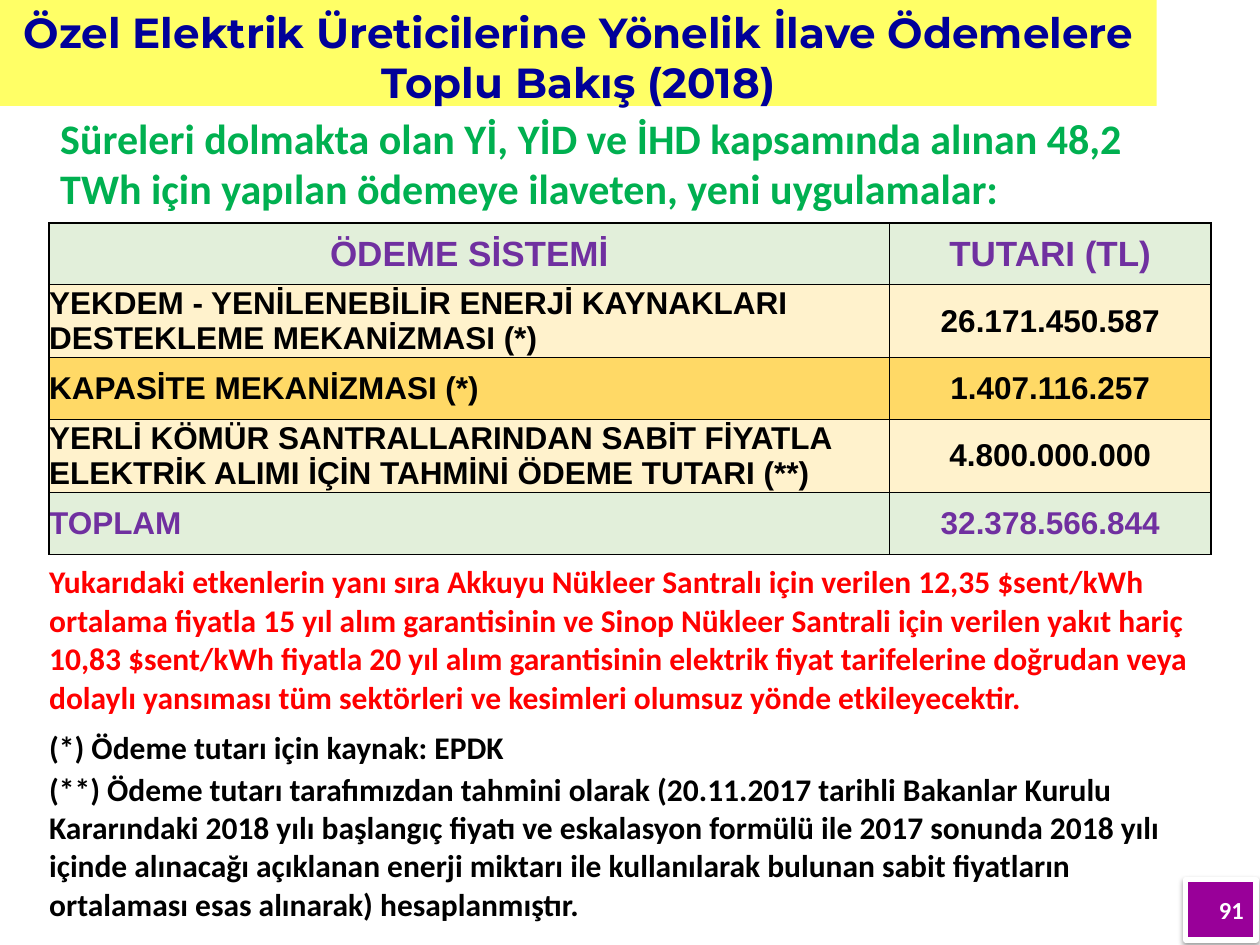
from typing import NamedTuple

from lxml.etree import SubElement
from pptx import Presentation
from pptx.dml.color import RGBColor
from pptx.enum.shapes import MSO_SHAPE
from pptx.enum.text import MSO_ANCHOR, PP_ALIGN
from pptx.oxml.ns import qn
from pptx.util import Inches, Pt

WHITE = RGBColor(0xFF, 0xFF, 0xFF)
BLACK = RGBColor(0, 0, 0)
RED = RGBColor(0xFF, 0, 0)
GREEN = RGBColor(0, 0xB0, 0x50)
NAVY = RGBColor(0, 0, 0x99)
VIOLET = RGBColor(0x70, 0x30, 0xA0)
PLUM = RGBColor(0x99, 0, 0x99)
LEMON = RGBColor(0xFF, 0xFF, 0x66)
MINT = RGBColor(0xE2, 0xEF, 0xDA)
CREAM = RGBColor(0xFF, 0xF2, 0xCC)
GOLD = RGBColor(0xFF, 0xD9, 0x66)


class Style(NamedTuple):
    font: str
    size: int
    color: RGBColor
    align: PP_ALIGN = PP_ALIGN.LEFT


class Row(NamedTuple):
    high: float
    label: str
    total: str
    color: RGBColor
    fill: RGBColor
    size: int = 18
    align: PP_ALIGN = PP_ALIGN.LEFT


class Note(NamedTuple):
    high: float
    text: str
    color: RGBColor


ROWS = [
    Row(0.49, "ÖDEME SİSTEMİ", "TUTARI (TL)", VIOLET, MINT, 20, PP_ALIGN.CENTER),
    Row(0.58, "YEKDEM - YENİLENEBİLİR ENERJİ KAYNAKLARI DESTEKLEME MEKANİZMASI (*)",
        "26.171.450.587", BLACK, CREAM),
    Row(0.49, "KAPASİTE MEKANİZMASI (*)", "1.407.116.257", BLACK, GOLD),
    Row(0.58, "YERLİ KÖMÜR SANTRALLARINDAN SABİT FİYATLA ELEKTRİK ALIMI İÇİN "
        "TAHMİNİ ÖDEME TUTARI (**)", "4.800.000.000", BLACK, CREAM),
    Row(0.49, "TOPLAM", "32.378.566.844", VIOLET, MINT),
]
NOTES = [
    Note(1.37, "Yukarıdaki etkenlerin yanı sıra Akkuyu Nükleer Santralı için verilen "
         "12,35 $sent/kWh ortalama fiyatla 15 yıl alım garantisinin ve Sinop Nükleer "
         "Santrali için verilen yakıt hariç 10,83 $sent/kWh fiyatla 20 yıl alım "
         "garantisinin elektrik fiyat tarifelerine doğrudan veya dolaylı yansıması tüm "
         "sektörleri ve kesimleri olumsuz yönde etkileyecektir.", RED),
    Note(0.35, "(*) Ödeme tutarı için kaynak: EPDK", BLACK),
    Note(1.17, "(**) Ödeme tutarı tarafımızdan tahmini olarak (20.11.2017 tarihli "
         "Bakanlar Kurulu Kararındaki 2018 yılı başlangıç fiyatı ve eskalasyon formülü "
         "ile 2017 sonunda 2018 yılı içinde alınacağı açıklanan enerji miktarı ile "
         "kullanılarak bulunan sabit fiyatların ortalaması esas alınarak) "
         "hesaplanmıştır.", BLACK),
]
WIDTHS = (6.67, 2.55)
# Rule widths above each row, then below the last one
EDGES = (1, 1, 0.5, 0.5, 1, 1, 0, 0, 0)


def write(frame, text: str, style: Style) -> None:
    frame.word_wrap = True
    para = frame.paragraphs[0]
    para.alignment = style.align
    run = para.add_run()
    run.text = text
    form = {"name": style.font, "size": Pt(style.size), "bold": True}
    for name, value in form.items():
        setattr(run.font, name, value)
    run.font.color.rgb = style.color


def add_box(slide, at: tuple, fill: RGBColor, text: str, style: Style):
    box = slide.shapes.add_shape(MSO_SHAPE.RECTANGLE, *map(Inches, at))
    box.shadow.inherit = False
    box.fill.solid()
    box.fill.fore_color.rgb = fill
    box.line.fill.background()
    write(box.text_frame, text, style)
    return box


def add_shade(box) -> None:
    glow = SubElement(box.element.spPr.find(qn("a:effectLst")), qn("a:outerShdw"),
                      blurRad=str(Pt(3.1)), dist=str(Pt(1.6)), dir="5400000",
                      rotWithShape="0")
    tint = SubElement(glow, qn("a:srgbClr"), val=str(BLACK))
    SubElement(tint, qn("a:alpha"), val="38000")


def set_edges(cell, widths: dict) -> None:
    props = cell._tc.get_or_add_tcPr()
    for side, width in widths.items():
        line = SubElement(props, qn(f"a:ln{side}"), w=str(Pt(width)))
        if width:
            ink = SubElement(line, qn("a:solidFill"))
            SubElement(ink, qn("a:srgbClr"), val=str(BLACK))
        else:
            SubElement(line, qn("a:noFill"))


def add_grid(slide) -> None:
    lines = ROWS + NOTES
    high = sum(line.high for line in lines)
    grid = slide.shapes.add_table(len(lines), len(WIDTHS), Inches(0.39), Inches(1.77),
                                  Inches(sum(WIDTHS)), Inches(high)).table
    for col, width in zip(grid.columns, WIDTHS):
        col.width = Inches(width)

    # Heights, rules, insets and fills
    bare = {"margin_left": 0, "margin_right": 0, "margin_top": 0, "margin_bottom": 0,
            "vertical_anchor": MSO_ANCHOR.MIDDLE}
    for i, line in enumerate(lines):
        grid.rows[i].height = Inches(line.high)
        side = 1 if i < len(ROWS) else 0
        for cell in grid.rows[i].cells:
            set_edges(cell, {"L": side, "R": side, "T": EDGES[i], "B": EDGES[i + 1]})
            for name, value in bare.items():
                setattr(cell, name, value)
            if side:
                cell.fill.solid()
                cell.fill.fore_color.rgb = line.fill
            else:
                cell.fill.background()

    # Payment rows
    for i, row in enumerate(ROWS):
        for j, (text, align) in enumerate([(row.label, row.align),
                                           (row.total, PP_ALIGN.CENTER)]):
            write(grid.cell(i, j).text_frame, text,
                  Style("Arial", row.size, row.color, align))

    # Notes across both columns
    for i, note in enumerate(NOTES, len(ROWS)):
        grid.cell(i, 0).merge(grid.cell(i, 1))
        write(grid.cell(i, 0).text_frame, note.text, Style("Calibri", 18, note.color))


def main() -> None:
    deck = Presentation()
    deck.slide_width, deck.slide_height = Inches(10), Inches(7.5)
    slide = deck.slides.add_slide(deck.slide_layouts[6])

    # Title band
    band = add_box(slide, (0, 0, 9.18, 0.84), LEMON,
                   "Özel Elektrik Üreticilerine Yönelik İlave Ödemelere Toplu Bakış (2018)",
                   Style("Montserrat", 24, NAVY, PP_ALIGN.CENTER))
    band.text_frame.vertical_anchor = MSO_ANCHOR.TOP

    # Page number
    page = add_box(slide, (9.41, 6.98, 0.56, 0.48), PLUM, "91",
                   Style("Calibri", 14, WHITE, PP_ALIGN.RIGHT))
    page.text_frame.vertical_anchor = MSO_ANCHOR.MIDDLE
    page.line.color.rgb = WHITE
    page.line.width = Pt(3)
    add_shade(page)

    # Payments and notes
    add_grid(slide)

    # Lead sentence
    lead = slide.shapes.add_textbox(*map(Inches, (0.38, 0.84, 9.23, 0.91)))
    write(lead.text_frame, "Süreleri dolmakta olan Yİ, YİD ve İHD kapsamında alınan "
          "48,2 TWh için yapılan ödemeye ilaveten, yeni uygulamalar:",
          Style("Calibri", 24, GREEN))

    deck.save("out.pptx")


if __name__ == "__main__":
    main()
